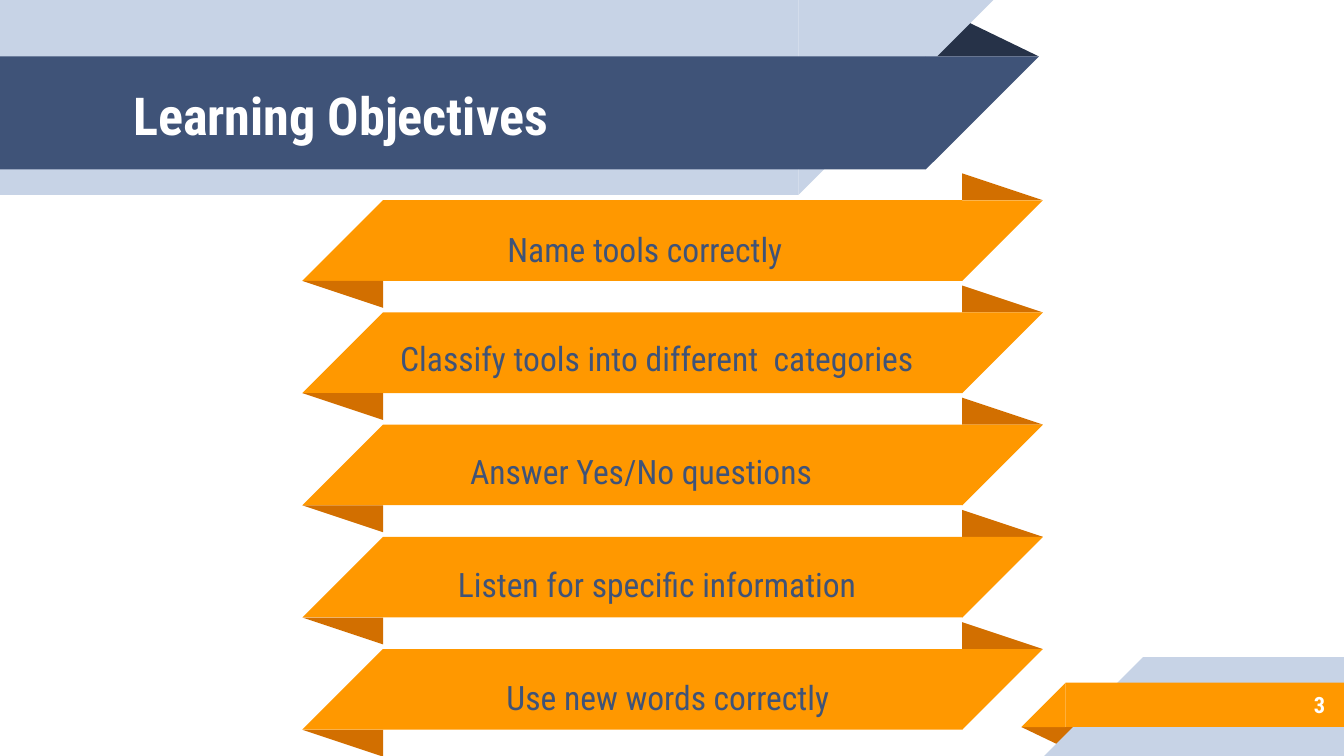
from pptx import Presentation
from pptx.dml.color import RGBColor
from pptx.enum.shapes import MSO_SHAPE
from pptx.enum.text import MSO_ANCHOR, MSO_AUTO_SIZE, PP_ALIGN
from pptx.util import Inches, Pt
from lxml.etree import SubElement

COLS, ROWS = 100, 56.25
UNIT = Inches(10) / COLS
FONT = "Roboto Condensed"
NAVY, PALE, DARK = "3F5378", "C7D3E6", "263248"
GOLD, RUST, WHITE = "FF9800", "D26F00", "FFFFFF"
GOALS = [
    ("Name tools correctly", 26.6, 5.1),
    ("Classify tools into different  categories", 27.5, 4.5),
    ("Answer Yes/No questions ", 26.6, 4.5),
    ("Listen for specific information", 27.5, 4.5),
    ("Use new words correctly", 28.3, 4.5),
]


def color(code):
    return RGBColor.from_string(code)


def span(box):
    return [round(n * UNIT) for n in box]


def draw(group, kind, box, code, turn=0, flip=False, peak=None):
    shape = group.shapes.add_shape(kind, *span(box))
    shape.shadow.inherit = False
    shape.fill.solid()
    shape.fill.fore_color.rgb = color(code)
    shape.line.fill.background()
    shape.rotation = turn
    if flip:
        shape._element.spPr.get_or_add_xfrm().set("flipH", "1")
    if peak is not None:
        shape.adjustments[0] = peak


def fold(group, box, code, peak, turn=0):
    draw(group, MSO_SHAPE.ISOSCELES_TRIANGLE, box, code, turn, peak=peak)


def slant(group, box, code, left=False, right=False):
    x, y, w, h = box
    core = (x + h * left, y, w - h * (left + right), h)
    draw(group, MSO_SHAPE.RECTANGLE, core, code)
    if left:
        draw(group, MSO_SHAPE.RIGHT_TRIANGLE, (x, y, h, h), code, flip=True)
    if right:
        tip = (x + w - h, y, h, h)
        draw(group, MSO_SHAPE.RIGHT_TRIANGLE, tip, code, 180, True)


def write(slide, box, text, holder=None, size=18, code=NAVY, bold=False,
          align=PP_ALIGN.CENTER, before=0, after=0):
    if holder is None:
        holder = slide.shapes.add_textbox(*span(box))
    else:
        holder.left, holder.top, holder.width, holder.height = span(box)
        slide.shapes._spTree.append(holder._element)
    frame = holder.text_frame
    frame.word_wrap = True
    frame.auto_size = MSO_AUTO_SIZE.NONE
    frame.vertical_anchor = MSO_ANCHOR.MIDDLE
    frame.margin_left = frame.margin_right = Inches(0.1)
    frame.margin_top = frame.margin_bottom = Inches(0.1)
    para = frame.paragraphs[0]
    para.alignment = align
    para.space_before, para.space_after = Pt(before), Pt(after)
    props = para._p.get_or_add_pPr()
    props.set("marL", "0")
    props.set("indent", "0")
    SubElement(props, props.tag.replace("pPr", "buNone"))
    run = para.add_run()
    run.text = text
    run.font.name, run.font.size, run.font.bold = FONT, Pt(size), bold
    run.font.color.rgb = color(code)


def header(slide, box):
    x, y, w, h = box
    group = slide.shapes.add_group_shape()
    top, high = y + 4.2, 8.4
    lip = high / 3
    fold(group, (x + w - 8.5, top - lip, 8.5, lip), DARK, 0.32)
    slant(group, (x, y, w - 3.4, h), PALE, right=True)
    slant(group, (x, top, w, high), NAVY, right=True)
    write(slide, (x + 8.9, top + 0.1, 37.2, high), "Learning Objectives",
          slide.shapes.title, size=28, code=WHITE, bold=True,
          align=PP_ALIGN.LEFT)


def footer(slide, box):
    x, y, w, h = box
    group = slide.shapes.add_group_shape()
    top, high = y + 1.9, 3.3
    fold(group, (x, top + high, 4.3, 1.4), RUST, 0.32, 180)
    slant(group, (x + 1.7, y, w - 1.7, h), PALE, left=True)
    slant(group, (x, top, w, high), GOLD, left=True)
    write(slide, (x + 7.3, top - 0.1, 16.3, 3.5), "3", size=12,
          code=WHITE, bold=True, align=PP_ALIGN.RIGHT)


def ribbon(slide, box):
    x, y, w, h = box
    group = slide.shapes.add_group_shape()
    lip = h / 3
    fold(group, (x + w - h, y - lip, h, lip), RUST, 0)
    slant(group, box, GOLD, left=True, right=True)
    fold(group, (x, y + h, h, lip), RUST, 0, 180)


def goals(slide, box, holders):
    x, y, w, h = box
    step = h / len(GOALS)
    for row, (text, left, high) in enumerate(GOALS):
        ribbon(slide, (x, y + row * step, w, 6))
        place = (left, y + 1.1 + row * 8.4, 42.8, high)
        holder = holders[row] if row < len(holders) else None
        write(slide, place, text, holder, before=6, after=10)


def main():
    deck = Presentation()
    deck.slide_width, deck.slide_height = span((COLS, ROWS))
    slide = deck.slides.add_slide(deck.slide_layouts[4])
    *holders, spare = list(slide.placeholders)[1:]
    spare._element.getparent().remove(spare._element)
    header(slide, (0, 0, 77.3, 14.5))
    footer(slide, (76, 48.9, 24, ROWS - 48.9))
    goals(slide, (22.5, 14.9, 55.1, 41.75), holders)
    deck.save("out.pptx")


if __name__ == "__main__":
    main()
